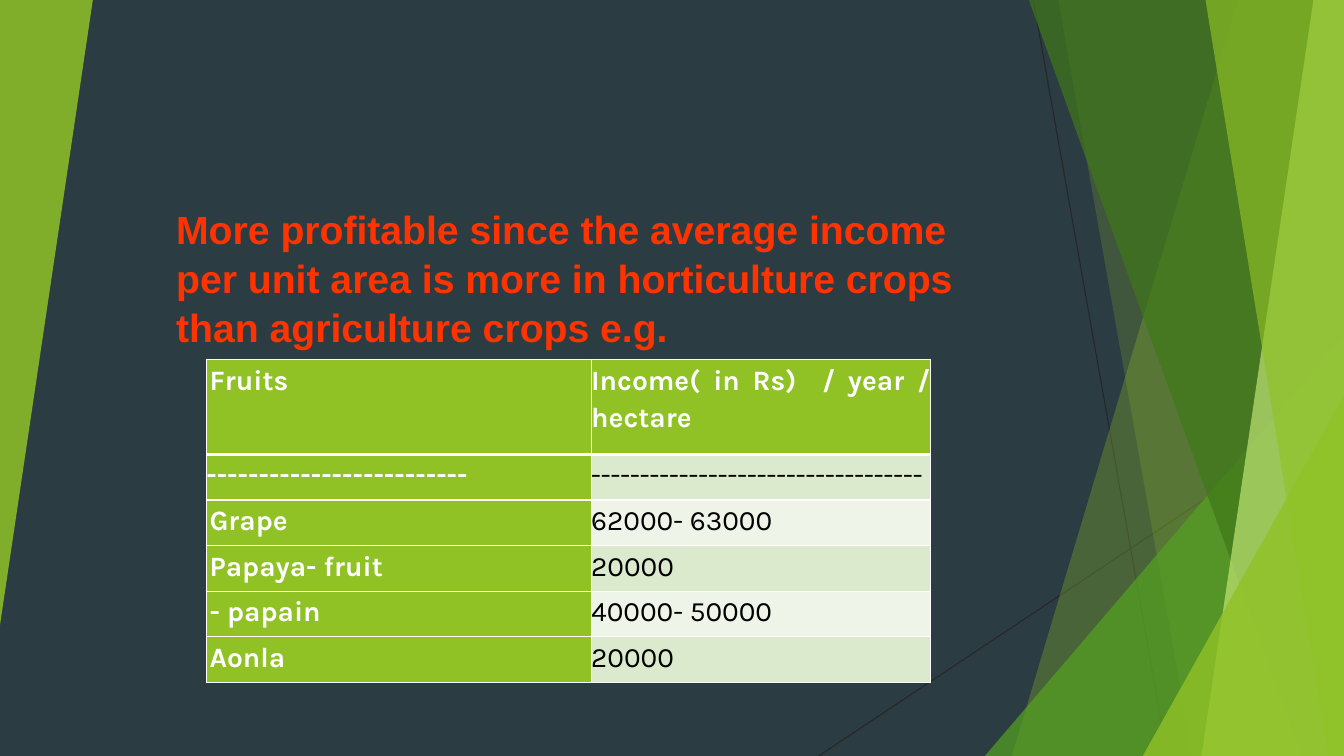
import pptx
import pptx.dml.color
import pptx.enum.shapes
import pptx.enum.text
import pptx.oxml.ns
import pptx.util
from lxml import etree

Cm, Pt = pptx.util.Cm, pptx.util.Pt
qn = pptx.oxml.ns.qn
ALIGN = pptx.enum.text.PP_ALIGN
WIDE, HIGH = 33.87, 19.05

HEX = {
    "night": "2C3C43", "line": "262626", "lime": "90C226", "leaf": "54A021",
    "moss": "3F7819", "pale": "C0E474", "red": "FF3300", "white": "FFFFFF",
    "black": "000000", "odd": "DBE9CD", "even": "EEF4E8",
}


def rgb(name):
    return pptx.dml.color.RGBColor.from_string(HEX[name])


class Deck:
    def __init__(self):
        self.prs = pptx.Presentation()
        self.prs.slide_width, self.prs.slide_height = Cm(WIDE), Cm(HIGH)
        self.slide = self.prs.slides.add_slide(self.prs.slide_layouts[6])
        self.shapes = self.slide.shapes
        back = self.slide.background.fill
        back.solid()
        back.fore_color.rgb = rgb("night")

    def line(self, x1, y1, x2, y2):
        kind = pptx.enum.shapes.MSO_CONNECTOR.STRAIGHT
        line = self.shapes.add_connector(kind, Cm(x1), Cm(y1), Cm(x2), Cm(y2))
        line.line.color.rgb = rgb("line")
        line.line.width = Pt(0.75)
        etree.SubElement(line.element.spPr, qn("a:effectLst"))

    def paint(self, shape, color, alpha):
        """Fill a shape with a colour at alpha percent, without outline."""
        shape.shadow.inherit = False
        shape.fill.solid()
        shape.fill.fore_color.rgb = rgb(color)
        shape.line.fill.background()
        tint = shape.element.spPr.find(".//" + qn("a:srgbClr"))
        etree.SubElement(tint, qn("a:alpha")).set("val", str(alpha * 1000))

    def band(self, top, foot, color, alpha):
        """Fill from a slanted left edge to the right side of the slide."""
        pen = self.shapes.build_freeform(Cm(top), 0, scale=1.0)
        edge = [(WIDE, 0), (WIDE, HIGH), (foot, HIGH)]
        pen.add_line_segments([(Cm(x), Cm(y)) for x, y in edge], close=True)
        self.paint(pen.convert_to_shape(), color, alpha)

    def wedge(self, x, y, wide, high, color, alpha, turn=0):
        """Draw a triangle with its right angle in a corner."""
        kind = pptx.enum.shapes.MSO_SHAPE.ISOSCELES_TRIANGLE
        shape = self.shapes.add_shape(kind, Cm(x), Cm(y), Cm(wide), Cm(high))
        shape.adjustments[0] = 1
        shape.rotation = turn
        self.paint(shape, color, alpha)

    def style(self, para, font, size, color, bold):
        for run in para.runs:
            run.font.name, run.font.size = font, Pt(size)
            run.font.bold = bold
            run.font.color.rgb = rgb(color)

    def title(self, text, x, y, wide, high):
        box = self.shapes.add_textbox(Cm(x), Cm(y), Cm(wide), Cm(high))
        frame = box.text_frame
        frame.word_wrap = True
        frame.vertical_anchor = pptx.enum.text.MSO_ANCHOR.BOTTOM
        frame.text = text
        para = frame.paragraphs[0]
        para.line_spacing = 1.04
        self.style(para, "Arial", 28, "red", True)

    def border(self, cell, side, width):
        line = etree.SubElement(cell._tc.get_or_add_tcPr(), qn("a:ln" + side))
        line.set("w", str(Pt(width)))
        fill = etree.SubElement(line, qn("a:solidFill"))
        etree.SubElement(fill, qn("a:srgbClr")).set("val", HEX["white"])

    def cell(self, cell, text, row, col):
        cell.margin_left = cell.margin_right = 0
        cell.margin_top = cell.margin_bottom = 0
        head = row == 0 or col == 0
        for side in "LRTB":
            # The thick rule under the header belongs to the header row.
            if side != "T" or row != 1:
                self.border(cell, side, 3 if side == "B" and row == 0 else 1)
        cell.fill.solid()
        shade = "lime" if head else "odd" if row % 2 else "even"
        cell.fill.fore_color.rgb = rgb(shade)
        cell.text_frame.text = text
        para = cell.text_frame.paragraphs[0]
        para.line_spacing = 1.15
        if col == 0 and row != 1:
            para._p.get_or_add_pPr().set("marL", str(Cm(0.08)))
        if col == 1 and row == 0:
            para.alignment = ALIGN.JUSTIFY
        self.style(para, "Karla", 20, "white" if head else "black", head)

    def table(self, rows, x, y, cols, highs):
        frame = self.shapes.add_table(
            len(rows), len(cols), Cm(x), Cm(y), Cm(sum(cols)), Cm(sum(highs)))
        grid = frame.table
        grid.horz_banding = False
        for col, wide in zip(grid.columns, cols):
            col.width = Cm(wide)
        for r, (texts, high) in enumerate(zip(rows, highs)):
            grid.rows[r].height = Cm(high)
            for c, text in enumerate(texts):
                self.cell(grid.cell(r, c), text, r, c)


def main():
    deck = Deck()
    deck.line(26.04, 0, 29.42, HIGH)
    deck.line(WIDE, 10.24, 20.63, HIGH)
    deck.band(31.2, 25.5, "lime", 30)
    deck.band(26.67, 30.05, "lime", 20)
    deck.wedge(24.82, 8.46, 9.05, 10.59, "leaf", 72)
    deck.band(25.93, 32.8, "moss", 70)
    deck.band(33.1, 30.28, "pale", 70)
    deck.band(30.38, 33.48, "lime", 65)
    deck.wedge(28.8, 9.98, 5.07, 9.07, "lime", 80)
    deck.wedge(0, 0, 2.34, 15.75, "lime", 85, turn=180)
    deck.title("More profitable since the average income per unit area is more "
               "in horticulture crops than agriculture crops e.g.",
               4.19, 5.15, 21.56, 3.8)
    income = [
        ("Fruits", "Income( in Rs)  / year / hectare"),
        ("-" * 25, "-" * 34),
        ("Grape", "62000- 63000"),
        ("Papaya- fruit", "20000"),
        ("- papain", "40000- 50000"),
        ("Aonla", "20000"),
    ]
    deck.table(income, 5.2, 9.06, [9.7, 8.55], [2.39] + [1.15] * 5)
    deck.prs.save("out.pptx")


if __name__ == "__main__":
    main()
